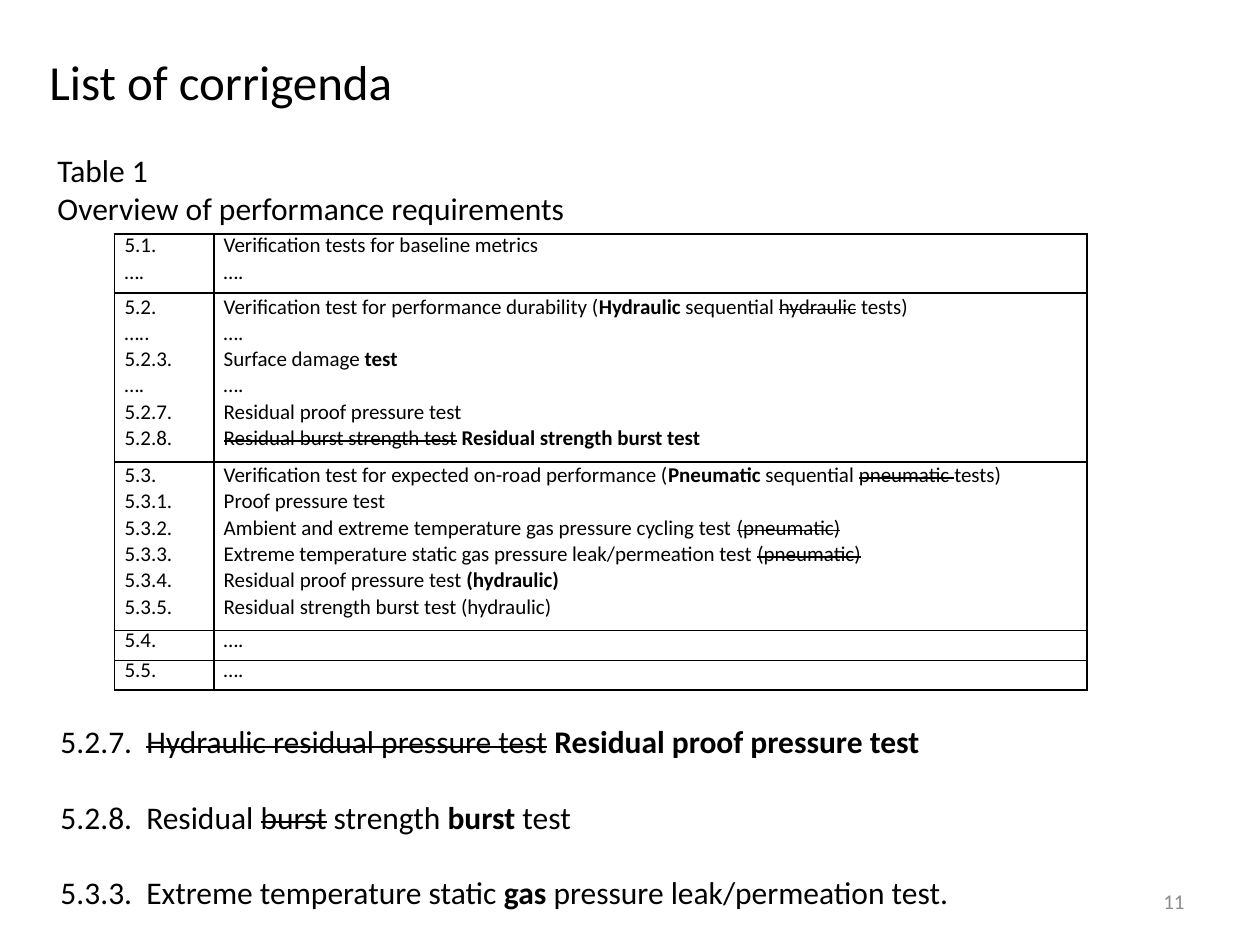
from dataclasses import dataclass

from lxml.etree import SubElement
from pptx import Presentation
from pptx.dml.color import RGBColor
from pptx.enum.text import MSO_ANCHOR as Anchor, PP_ALIGN as Align
from pptx.oxml.ns import qn
from pptx.slide import Slide
from pptx.util import Cm, Pt

BLACK = RGBColor(0x00, 0x00, 0x00)
GREY = RGBColor(0x8C, 0x8C, 0x8C)

# In the wording, *...* is bold and ~...~ is struck through.
REQUIREMENTS = [
    [("5.1.", "Verification tests for baseline metrics"),
     ("….", "….")],
    [("5.2.", "Verification test for performance durability "
              "(*Hydraulic* sequential ~hydraulic~ tests)"),
     ("…..", "…."),
     ("5.2.3.", "Surface damage *test*"),
     ("….", "…."),
     ("5.2.7.", "Residual proof pressure test"),
     ("5.2.8.", "~Residual burst strength test~* Residual strength burst test*")],
    [("5.3.", "Verification test for expected on-road performance "
              "(*Pneumatic* sequential ~pneumatic ~tests)"),
     ("5.3.1.", "Proof pressure test"),
     ("5.3.2.", "Ambient and extreme temperature gas pressure cycling test ~(pneumatic)~"),
     ("5.3.3.", "Extreme temperature static gas pressure leak/permeation test ~(pneumatic)~"),
     ("5.3.4.", "Residual proof pressure test* (hydraulic)*"),
     ("5.3.5.", "Residual strength burst test (hydraulic)")],
    [("5.4.", "….")],
    [("5.5.", "….")],
]
ROW_HEIGHTS = [1.19, 3.4, 3.4, 0.6, 0.6]
COLUMN_WIDTHS = [2, 17.6]

CORRECTIONS = [
    "5.2.7.\t~Hydraulic residual pressure test~ *Residual proof pressure test*",
    "5.2.8.\tResidual ~burst~ strength *burst* test",
    "5.3.3.\tExtreme temperature static* gas* pressure leak/permeation test.",
]


def box(*lengths):
    return [Cm(length) for length in lengths]


@dataclass
class CorrigendaSlide:
    slide: Slide
    font: str = "Calibri"

    def fill_frame(self, frame, lines, size, color=BLACK, align=Align.LEFT,
                   margin=0, indent=0, before=0, after=0, spacing=None):
        """Fill a text frame with one marked-up paragraph per line."""
        for number, line in enumerate(lines):
            paragraph = frame.add_paragraph() if number else frame.paragraphs[0]
            paragraph.alignment = align
            paragraph.space_before, paragraph.space_after = Pt(before), Pt(after)
            paragraph.line_spacing = spacing
            paragraph.font.name, paragraph.font.size = self.font, Pt(size)
            paragraph.font.color.rgb = color
            properties = paragraph._p.get_or_add_pPr()
            properties.set("marL", str(Cm(margin)))
            properties.set("indent", str(Cm(indent)))
            self.add_runs(paragraph, line)

    def add_runs(self, paragraph, line):
        for i, bold_part in enumerate(line.split("*")):
            for j, part in enumerate(bold_part.split("~")):
                if not part:
                    continue
                run = paragraph.add_run()
                run.text = part
                if i % 2:
                    run.font.bold = True
                if j % 2:
                    run.font._element.set("strike", "sngStrike")

    def title(self, text, place):
        heading = self.slide.shapes.title
        heading.left, heading.top, heading.width, heading.height = place
        heading.text_frame.vertical_anchor = Anchor.MIDDLE
        self.fill_frame(heading.text_frame, [text], 28)

    def text(self, lines, place, size=18, anchor=Anchor.TOP, **style):
        frame = self.slide.shapes.add_textbox(*place).text_frame
        frame.word_wrap = True
        frame.vertical_anchor = anchor
        self.fill_frame(frame, lines, size, **style)

    def table(self, groups, widths, heights, left, top):
        """Draw each group of (number, requirement) pairs as one row."""
        place = box(left, top, sum(widths), sum(heights))
        table = self.slide.shapes.add_table(len(heights), len(widths), *place).table
        table.first_row = table.horz_banding = False
        for column, width in zip(table.columns, widths):
            column.width = Cm(width)
        for row, height, group in zip(table.rows, heights, groups):
            row.height = Cm(height)
            for cell, lines in zip(row.cells, zip(*group)):
                cell.margin_left = cell.margin_right = 0
                cell.margin_top = cell.margin_bottom = 0
                cell.vertical_anchor = Anchor.MIDDLE
                self.fill_frame(cell.text_frame, lines, 12, margin=0.2,
                                before=2, after=4, spacing=Pt(9))
                self.border(cell)
                cell.fill.background()

    def border(self, cell):
        properties = cell._tc.get_or_add_tcPr()
        for side in ("a:lnL", "a:lnR", "a:lnT", "a:lnB"):
            line = SubElement(properties, qn(side), w=str(Pt(1)))
            fill = SubElement(line, qn("a:solidFill"))
            SubElement(fill, qn("a:srgbClr"), val=str(BLACK))


def main():
    deck = Presentation()
    deck.slide_width, deck.slide_height = Cm(25.4), Cm(19.05)
    page = CorrigendaSlide(deck.slides.add_slide(deck.slide_layouts[5]))

    page.title("List of corrigenda", box(0.74, 0.53, 22.86, 2.2))
    page.table(REQUIREMENTS, COLUMN_WIDTHS, ROW_HEIGHTS, 2.31, 4.72)
    page.text(["Table 1", "Overview of performance requirements"],
              box(0.91, 2.92, 15.8, 1.8))
    page.text(CORRECTIONS, box(0.97, 14.43, 22.73, 4.11),
              margin=1.73, indent=-1.73, after=21.6)
    page.text(["11"], box(18.21, 17.65, 5.92, 1.02), size=12,
              anchor=Anchor.MIDDLE, color=GREY, align=Align.RIGHT)

    deck.save("out.pptx")


if __name__ == "__main__":
    main()
